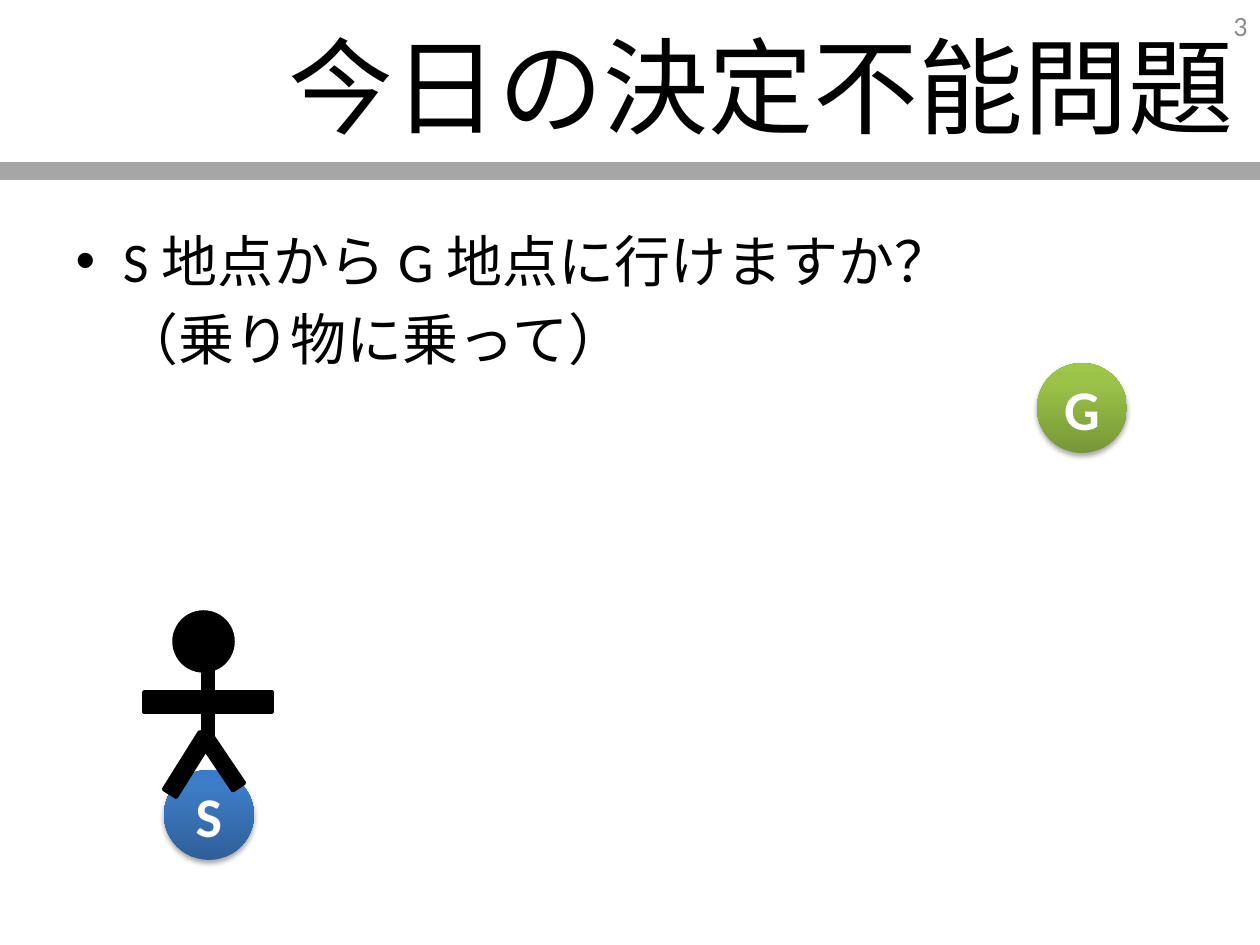
"""Build the slide that asks whether G can be reached from S."""
from lxml.etree import SubElement as Sub
from pptx import Presentation
from pptx.dml.color import RGBColor as Rgb
from pptx.enum.shapes import MSO_CONNECTOR as Link, MSO_SHAPE as Form
from pptx.enum.text import MSO_ANCHOR as Anchor, MSO_AUTO_SIZE as Fit, PP_ALIGN as Align
from pptx.oxml.ns import qn
from pptx.util import Pt

TITLE = "今日の決定不能問題"
LINES = ["S 地点から G 地点に行けますか？", "\t（乗り物に乗って）"]
PAGE = "3"
BOXES = {"title": (112, 5, 1134, 158), "body": (63, 220, 1134, 624), "page": (966, 0, 294, 50)}
RULE = (0, 171, 1260, 171)
SPOTS = [
    ("G", (1037, 363), ("779737", "9BC348", "9DC746")),
    ("S", (164, 770), ("2F5F99", "3D7CC7", "3A7CCB")),
]
SPOT = 90
MAN = [
    (Form.OVAL, (174, 612, 59, 59), 0),
    (Form.RECTANGLE, (203, 651, 10, 100), 0),
    (Form.RECTANGLE, (144, 692, 128, 20), 0),
    (Form.RECTANGLE, (154, 757, 68, 15), 302),
    (Form.RECTANGLE, (192, 755, 60, 14), 236),
]
THEME = {
    "font": "Calibri", "ink": "000000", "light": "FFFFFF", "grey": "8C8C8C", "rule": "A6A6A6",
    "title": 60, "body": 32, "page": 16, "thick": 10, "thin": 2,
}
STOPS = (0, 80000, 100000)
SHADE = {"blurRad": "40000", "dist": "23000", "dir": "5400000", "rotWithShape": "0"}
SCALE = 914400 / 126


def px(*nums):
    return [round(n * SCALE) for n in nums]


def put(obj, vals):
    for key, val in vals.items():
        setattr(obj, key, val)


def place(shape, box):
    put(shape, dict(zip(("left", "top", "width", "height"), px(*box))))


def write(frame, lines, size, hue, align, anchor=Anchor.MIDDLE, bold=False):
    put(frame, {"word_wrap": True, "auto_size": Fit.NONE, "vertical_anchor": anchor})
    frame.text = "\n".join(lines)
    for para in frame.paragraphs:
        para.alignment = align
        for run in para.runs:
            put(run.font, {"name": THEME["font"], "size": Pt(size), "bold": bold})
            run.font.color.rgb = Rgb.from_string(hue)


def shade(shape, hues):
    props = shape._element.spPr
    grad = Sub(props, qn("a:gradFill"), rotWithShape="1")
    stops = Sub(grad, qn("a:gsLst"))
    for pos, hue in zip(STOPS, hues):
        Sub(Sub(stops, qn("a:gs"), pos=str(pos)), qn("a:srgbClr"), val=hue)
    Sub(grad, qn("a:lin"), ang="16200000", scaled="0")
    shape.line.fill.background()
    shape.shadow.inherit = False
    cast = Sub(props.find(qn("a:effectLst")), qn("a:outerShdw"), SHADE)
    Sub(Sub(cast, qn("a:srgbClr"), val=THEME["ink"]), qn("a:alpha"), val="35000")


def add_spot(shapes, name, spot, hues):
    disc = shapes.add_shape(Form.OVAL, *px(*spot, SPOT, SPOT))
    shade(disc, hues)
    write(disc.text_frame, [name], THEME["body"], THEME["light"], Align.CENTER, bold=True)
    disc.text_frame.word_wrap = False


def add_man(shapes):
    man = shapes.add_group_shape()
    ink = Rgb.from_string(THEME["ink"])
    for form, box, turn in MAN:
        limb = man.shapes.add_shape(form, *px(*box))
        limb.rotation = turn
        limb.shadow.inherit = False
        for fill in (limb.fill, limb.line.fill):
            fill.solid()
            fill.fore_color.rgb = ink
        limb.line.width = Pt(THEME["thin"])


def add_rule(shapes):
    rule = shapes.add_connector(Link.STRAIGHT, *px(*RULE))
    rule.line.color.rgb = Rgb.from_string(THEME["rule"])
    rule.line.width = Pt(THEME["thick"])
    Sub(rule._element.spPr, qn("a:effectLst"))


def main():
    deck = Presentation()
    put(deck, dict(zip(("slide_width", "slide_height"), px(1260, 945))))
    slide = deck.slides.add_slide(deck.slide_layouts[1])
    shapes = slide.shapes
    title, body = slide.placeholders
    page = shapes.add_textbox(*px(*BOXES["page"]))
    write(page.text_frame, [PAGE], THEME["page"], THEME["grey"], Align.RIGHT)
    add_rule(shapes)
    place(title, BOXES["title"])
    write(title.text_frame, [TITLE], THEME["title"], THEME["ink"], Align.RIGHT)
    place(body, BOXES["body"])
    write(body.text_frame, LINES, THEME["body"], THEME["ink"], Align.LEFT, Anchor.TOP)
    Sub(body.text_frame.paragraphs[1]._p.get_or_add_pPr(), qn("a:buNone"))
    for spot in SPOTS:
        add_spot(shapes, *spot)
    add_man(shapes)
    deck.save("out.pptx")


if __name__ == "__main__":
    main()
